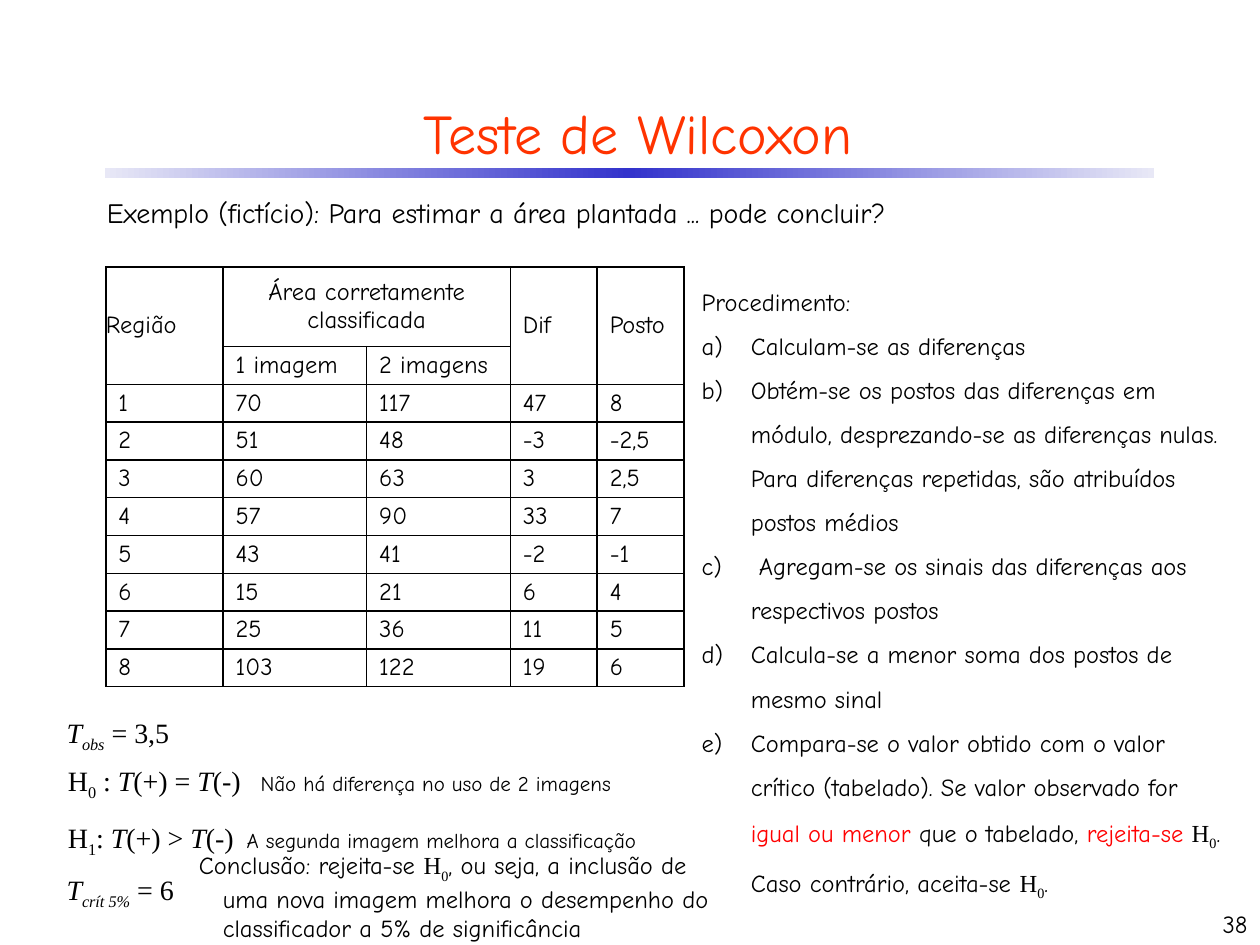
from lxml import etree
from pptx import Presentation
from pptx import util as u
from pptx.dml.color import RGBColor
from pptx.enum import shapes, text
from pptx.oxml.ns import qn

SANS, SERIF = "Comic Neue", "Times New Roman"
BLACK, RED = "000000", "FF0000"
LEFT, MID, RIGHT = text.PP_ALIGN.LEFT, text.PP_ALIGN.CENTER, text.PP_ALIGN.RIGHT
TOP, CENTER, LOW = text.MSO_ANCHOR.TOP, text.MSO_ANCHOR.MIDDLE, text.MSO_ANCHOR.BOTTOM
HEADS = [(0, 0, 1, 0, "Região"), (0, 1, 0, 2, "Área corretamente classificada"),
         (0, 3, 1, 3, "Dif"), (0, 4, 1, 4, "Posto")]
ROWS = [
    ["1", "70", "117", "47", "8"],
    ["2", "51", "48", "-3", "-2,5"],
    ["3", "60", "63", "3", "2,5"],
    ["4", "57", "90", "33", "7"],
    ["5", "43", "41", "-2", "-1"],
    ["6", "15", "21", "6", "4"],
    ["7", "25", "36", "11", "5"],
    ["8", "103", "122", "19", "6"],
]
STEPS = [
    "Calculam-se as diferenças",
    "Obtém-se os postos das diferenças em módulo, desprezando-se as diferenças nulas. "
    "Para diferenças repetidas, são atribuídos postos médios",
    " Agregam-se os sinais das diferenças aos respectivos postos",
    "Calcula-se a menor soma dos postos de mesmo sinal",
]
NULL = [("H", "m"), ("0", "ms")]


def color(code):
    return RGBColor.from_string(code)


def node(parent, tag, **attrs):
    return etree.SubElement(parent, qn(tag), attrs)


def write(para, runs, size, tint=BLACK):
    for words, style, *own in runs:
        run = para.add_run()
        run.text = words
        font = run.font
        font.name = SERIF if "m" in style else SANS
        font.size = u.Pt(own[0] if own else size)
        font.italic = "i" in style
        font.color.rgb = color(RED if "r" in style else tint)
        if "s" in style:
            run._r.get_or_add_rPr().set("baseline", "-25000")


def block(slide, box, paras, size, tint=BLACK, align=LEFT, anchor=TOP,
          space=1, hang=0, tabs=(), start=0):
    frame = slide.shapes.add_textbox(*map(u.Inches, box)).text_frame
    frame.word_wrap = True
    frame.vertical_anchor = anchor
    for i, runs in enumerate(paras):
        para = frame.add_paragraph() if i else frame.paragraphs[0]
        props = para._p.get_or_add_pPr()
        if hang:
            props.set("marL", str(u.Inches(hang)))
            props.set("indent", str(-u.Inches(hang)))
        if start and (i or start > 1):
            node(props, "a:buFont", typeface="+mj-lt")
            node(props, "a:buAutoNum", type="alphaLcParenR", startAt=str(start))
        if tabs:
            stops = node(props, "a:tabLst")
            node(stops, "a:tab", pos=str(u.Inches(tabs[i])), algn="l")
        para.alignment = align
        para.line_spacing = space
        write(para, runs, size, tint)


def header(slide, left, top):
    bar = slide.shapes.add_shape(shapes.MSO_SHAPE.RECTANGLE, u.Inches(left + 0.5),
                                 u.Inches(top + 0.66), u.Inches(8.33), u.Inches(0.08))
    bar.shadow.inherit = False
    bar.line.fill.background()
    bar.fill.gradient()
    bar.fill.gradient_angle = 0
    stops = bar._element.spPr.find(".//" + qn("a:gsLst"))
    for old in list(stops):
        stops.remove(old)
    for pos, code in ((0, "E8E8F6"), (50, "3333CC"), (100, "E8E8F6")):
        stop = node(stops, "a:gs", pos=str(pos * 1000))
        node(stop, "a:srgbClr", val=code)
    block(slide, (left, top, 9.47, 0.75), [[("Teste de Wilcoxon", "")]], 32,
          "FF3300", MID, CENTER)
    block(slide, (left + 0.42, top + 0.83, 8.7, 0.37),
          [[("Exemplo (fictício): Para estimar a área plantada ... pode concluir?", "")]],
          16, hang=0.21)


def cell(spot, words, side, align):
    props = spot._tc.get_or_add_tcPr()
    for edge in "LRTB":
        line = node(props, "a:ln" + edge, w=str(u.Pt(1)))
        node(node(line, "a:solidFill"), "a:srgbClr", val=BLACK)
    spot.fill.solid()
    spot.fill.fore_color.rgb = color("FFFFFF")
    spot.margin_left = spot.margin_right = u.Inches(side)
    spot.margin_top = spot.margin_bottom = 0
    spot.vertical_anchor = CENTER
    para = spot.text_frame.paragraphs[0]
    para.alignment = align
    para.space_before = u.Pt(2.8)
    if words:
        write(para, [(words, "")], 14)


def data(slide, left, top):
    wide, high = [0.93, 1.14, 1.14, 0.69, 0.69], [0.63] + [0.3] * 9
    grid = slide.shapes.add_table(len(high), len(wide), *map(
        u.Inches, (left, top, sum(wide), sum(high)))).table
    grid.first_row = grid.horz_banding = False
    for col, size in zip(grid.columns, wide):
        col.width = u.Inches(size)
    for row, size in zip(grid.rows, high):
        row.height = u.Inches(size)
    tops = [""] * 5
    for r, c, r2, c2, words in HEADS:
        grid.cell(r, c).merge(grid.cell(r2, c2))
        tops[c] = words
    for r, row in enumerate([tops, ["", "1 imagem", "2 imagens", "", ""]] + ROWS):
        for c, words in enumerate(row):
            cell(grid.cell(r, c), words, 0 if r + c == 0 else 0.1,
                 MID if (r, c) == (0, 1) else LEFT)


def steps(slide, left, top):
    paras = [[(words, "")] for words in ["Procedimento:"] + STEPS]
    block(slide, (left, top, 4.38, 3.64), paras, 14, space=1.5, hang=0.39, start=1)
    last = [("Compara-se o valor obtido com o valor crítico (tabelado). "
             "Se valor observado for ", ""), ("igual ou menor", "r"),
            (" que o tabelado, ", ""), ("rejeita-se ", "r"), *NULL,
            (". Caso contrário, aceita-se ", ""), *NULL, (".", "")]
    block(slide, (left, top + 3.5, 4.38, 1.52), [last], 14, space=1.5, hang=0.39, start=5)


def claim(mark, colon, sign, words):
    return [("H", "m"), (mark, "ms"), (colon, "m"), ("T", "mi"), (f"(+) {sign} ", "m"),
            ("T", "mi"), ("(-)\t", "m"), (words, "", 12)]


def result(slide, left, top):
    for down, width, mark, value in ((0, 1.19, "obs", " = 3,5"), (1.24, 1.8, "crít 5%", " = 6")):
        block(slide, (left, top + down, width, 0.51),
              [[("T", "mi"), (mark, "mis"), (value, "m")]], 16, space=1.5, hang=0.39)
    first = claim("0", " : ", "=", "Não há diferença no uso de 2 imagens") + [(" ", "")]
    second = claim("1", ": ", ">", "A segunda imagem melhora a classificação")
    block(slide, (left + 0.01, top + 0.38, 4.93, 0.91), [first, second], 16,
          space=1.5, tabs=(1.53, 1.42))
    block(slide, (left + 1.05, top + 1.22, 4.3, 0.81),
          [[("Conclusão: rejeita-se ", ""), *NULL,
            (", ou seja, a inclusão de uma nova imagem melhora o desempenho "
             "do classificador a 5% de significância", "")]], 14, hang=0.19)


def main():
    deck = Presentation()
    deck.slide_width, deck.slide_height = u.Inches(10), u.Inches(7.5)
    slide = deck.slides.add_slide(deck.slide_layouts[6])
    header(slide, 0.33, 0.67)
    data(slide, 0.84, 2.12)
    steps(slide, 5.47, 2.11)
    result(slide, 0.43, 5.48)
    block(slide, (7.92, 7, 2.08, 0.5), [[("38", "")]], 14, align=RIGHT, anchor=LOW)
    deck.save("out.pptx")


if __name__ == "__main__":
    main()
